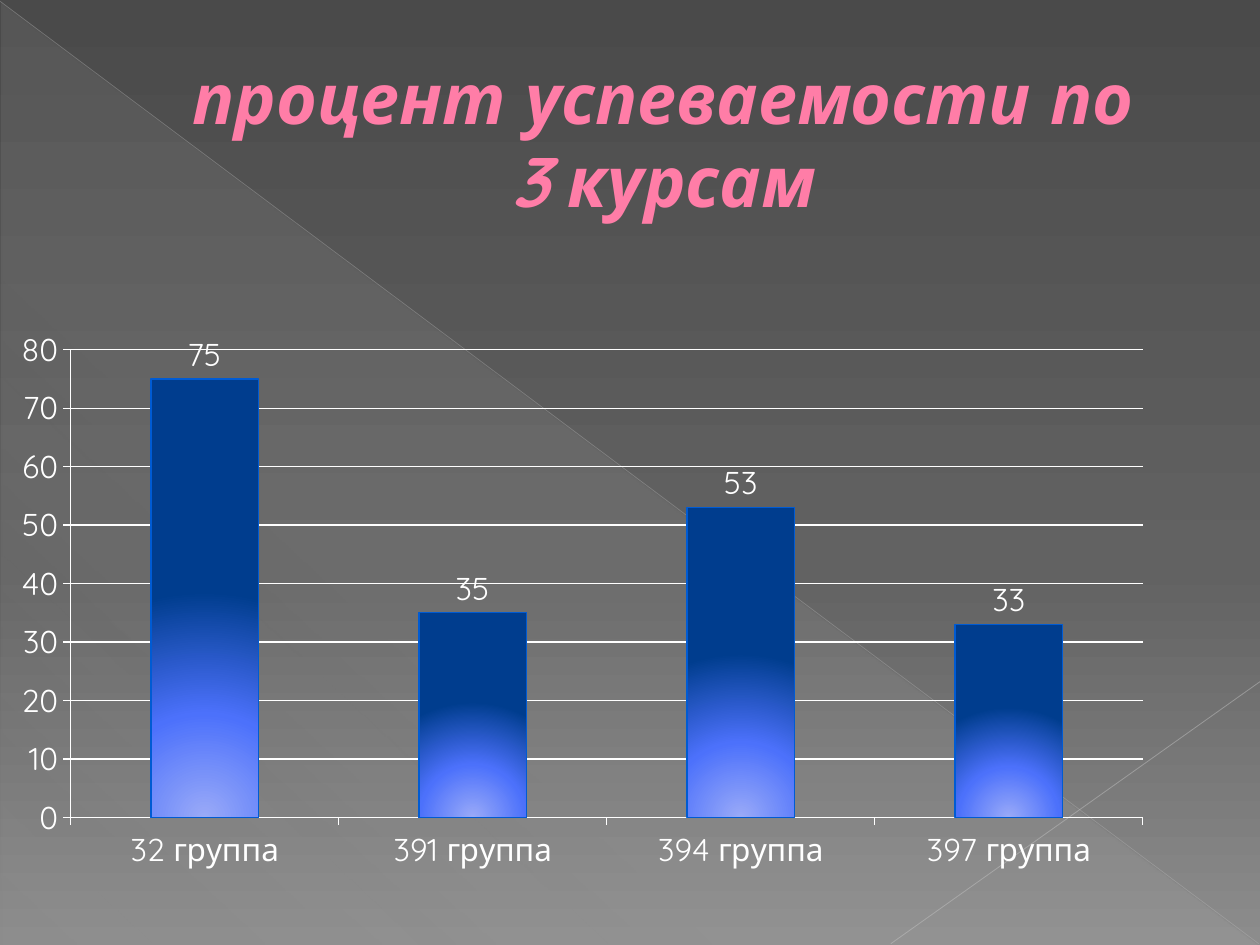
from dataclasses import dataclass

import pptx
import pptx.chart.data
import pptx.dml.color
import pptx.enum.chart
import pptx.enum.shapes
import pptx.enum.text
import pptx.oxml
import pptx.oxml.ns
import pptx.util
from pptx.util import Inches

qn = pptx.oxml.ns.qn
NS = pptx.oxml.ns.nsdecls


@dataclass(frozen=True)
class Theme:
    font: str = "Quicksand"
    title_size: int = 40
    chart_size: int = 18
    title: str = "FF7DA7"
    title_outline: str = "B12761"
    chart_text: str = "FFFFFF"
    bar_line: str = "005BD3"
    # Gradient stops: position %, colour, opacity %
    backdrop: tuple = ((0, "4A4A4A", 100), (60, "626262", 100), (100, "8C8C8C", 100))
    sheen: tuple = ((0, "D2D2D2", 10), (70, "D2D2D2", 8), (100, "D2D2D2", 1))
    bar: tuple = ((0, "9AAAF8", 100), (46, "4C71FB", 100), (100, "003D8E", 100))


def rgb(colour):
    return pptx.dml.color.RGBColor.from_string(colour)


def linear(angle):
    return f'<a:lin ang="{angle * 60000}" scaled="0"/>'


def circular(left, top, right, bottom):
    return (f'<a:path path="circle"><a:fillToRect l="{left * 1000}" t="{top * 1000}" '
            f'r="{right * 1000}" b="{bottom * 1000}"/></a:path>')


def set_gradient(fill, owner, stops, direction):
    """Give a fill the stops and direction; owner is the element that holds it."""
    fill.gradient()
    stop_xml = "".join(
        f'<a:gs pos="{pos * 1000}"><a:srgbClr val="{colour}">'
        f'<a:alpha val="{opacity * 1000}"/></a:srgbClr></a:gs>'
        for pos, colour, opacity in stops)
    old = next(owner.iter(qn("a:gradFill")))
    old.getparent().replace(old, pptx.oxml.parse_xml(
        f'<a:gradFill {NS("a")} rotWithShape="1"><a:gsLst>{stop_xml}</a:gsLst>'
        f'{direction}</a:gradFill>'))


def write_text(paragraph, text, *, font, size, colour, bold=False, italic=False, outline=None):
    """Write text into a paragraph; a newline becomes a line break."""
    for number, line in enumerate(text.split("\n")):
        if number:
            paragraph.add_line_break()
        run = paragraph.add_run()
        run.text = line
        run.font.name, run.font.size = font, pptx.util.Pt(size)
        run.font.bold, run.font.italic = bold, italic
        run.font.color.rgb = rgb(colour)
        if outline:
            run.font._element.insert(0, pptx.oxml.parse_xml(
                f'<a:ln {NS("a")} w="6350"><a:solidFill><a:srgbClr val="{outline}"/>'
                f'</a:solidFill></a:ln>'))


class SlideBuilder:
    def __init__(self, slide, theme):
        self.slide, self.theme = slide, theme

    def background(self):
        fill = self.slide.background.fill
        set_gradient(fill, self.slide._element, self.theme.backdrop, linear(90))

    def sheen(self, left, top, width, height):
        triangle = self.slide.shapes.add_shape(
            pptx.enum.shapes.MSO_SHAPE.RIGHT_TRIANGLE,
            Inches(left), Inches(top), Inches(width), Inches(height))
        triangle.shadow.inherit = False
        triangle.line.fill.background()
        set_gradient(triangle.fill, triangle._element, self.theme.sheen, linear(133))

    def line(self, start, end, colour, width, opacity):
        line = self.slide.shapes.add_connector(
            pptx.enum.shapes.MSO_CONNECTOR.STRAIGHT, *map(Inches, start + end))
        line.line.color.rgb = rgb(colour)
        line.line.width = pptx.util.Pt(width)
        properties = line._element.spPr
        next(properties.iter(qn("a:srgbClr"))).append(pptx.oxml.parse_xml(
            f'<a:alpha {NS("a")} val="{opacity * 1000}"/>'))
        properties.append(pptx.oxml.parse_xml(f'<a:effectLst {NS("a")}/>'))

    def title(self, text, left, top, width, height):
        box = self.slide.shapes.add_textbox(
            Inches(left), Inches(top), Inches(width), Inches(height))
        frame = box.text_frame
        frame.word_wrap = True
        frame.vertical_anchor = pptx.enum.text.MSO_ANCHOR.MIDDLE
        heading = frame.paragraphs[0]
        heading.alignment = pptx.enum.text.PP_ALIGN.CENTER
        heading._p.get_or_add_pPr().set("marL", str(Inches(0.53)))
        write_text(heading, text, font=self.theme.font, size=self.theme.title_size,
                   colour=self.theme.title, bold=True, italic=True,
                   outline=self.theme.title_outline)

    def column_chart(self, groups, rates, left, top, width, height, plot_area):
        theme = self.theme
        data = pptx.chart.data.CategoryChartData()
        data.categories = groups
        data.add_series("Series 1", rates)
        chart = self.slide.shapes.add_chart(
            pptx.enum.chart.XL_CHART_TYPE.COLUMN_CLUSTERED,
            Inches(left), Inches(top), Inches(width), Inches(height), data).chart
        chart.has_legend = chart.has_title = False
        chart.font.name, chart.font.size = theme.font, pptx.util.Pt(theme.chart_size)
        chart.font.color.rgb = rgb(theme.chart_text)

        # Bars and value labels
        plot = chart.plots[0]
        plot.vary_by_categories = False
        plot.gap_width = 150
        bars = plot.series[0]
        bars.invert_if_negative = False
        set_gradient(bars.format.fill, bars._element, theme.bar, circular(50, 155, 50, -55))
        bars.format.line.color.rgb = rgb(theme.bar_line)
        bars.format.line.width = pptx.util.Pt(0.75)
        plot.has_data_labels = True
        plot.data_labels.show_value = True
        plot.data_labels.position = pptx.enum.chart.XL_LABEL_POSITION.OUTSIDE_END

        # Axes and gridlines
        rate_axis = chart.value_axis
        rate_axis.minimum_scale, rate_axis.maximum_scale, rate_axis.major_unit = 0, 80, 10
        rate_axis.has_major_gridlines = True
        for axis in (chart.category_axis, rate_axis):
            axis.major_tick_mark = pptx.enum.chart.XL_TICK_MARK.OUTSIDE
        for part in (chart.category_axis, rate_axis, rate_axis.major_gridlines):
            part.format.line.color.rgb = rgb(theme.chart_text)
            part.format.line.width = pptx.util.Pt(0.75)

        # Fixed inner plot area
        area = next(chart._chartSpace.iter(qn("c:plotArea")))
        for old in area.findall(qn("c:layout")):
            area.remove(old)
        places = "".join(f'<c:{key} val="{value}"/>' for key, value in zip("xywh", plot_area))
        area.insert(0, pptx.oxml.parse_xml(
            f'<c:layout {NS("c")}><c:manualLayout><c:layoutTarget val="inner"/>'
            f'<c:xMode val="edge"/><c:yMode val="edge"/>{places}'
            f'</c:manualLayout></c:layout>'))


def main():
    deck = pptx.Presentation()
    deck.slide_width, deck.slide_height = Inches(10), Inches(7.5)
    page = SlideBuilder(deck.slides.add_slide(deck.slide_layouts[6]), Theme())

    # Backdrop
    page.background()
    page.sheen(0.01, 0.02, 9.98, 7.48)
    page.line((0, 0.01), (9.99, 7.49), "BFBFBF", 0.39, 35)
    page.line((10, 5.41), (7.07, 7.49), "C6C6C6", 0.47, 45)

    # Content
    page.title("процент успеваемости по\n3 курсам", 0, 0.47, 10, 1.25)
    page.column_chart(("32 группа", "391 группа", "394 группа", "397 группа"),
                      (75, 35, 53, 33), 0, 2.03, 10, 5.18,
                      plot_area=(0.056, 0.144, 0.851, 0.717))

    deck.save("out.pptx")


if __name__ == "__main__":
    main()
